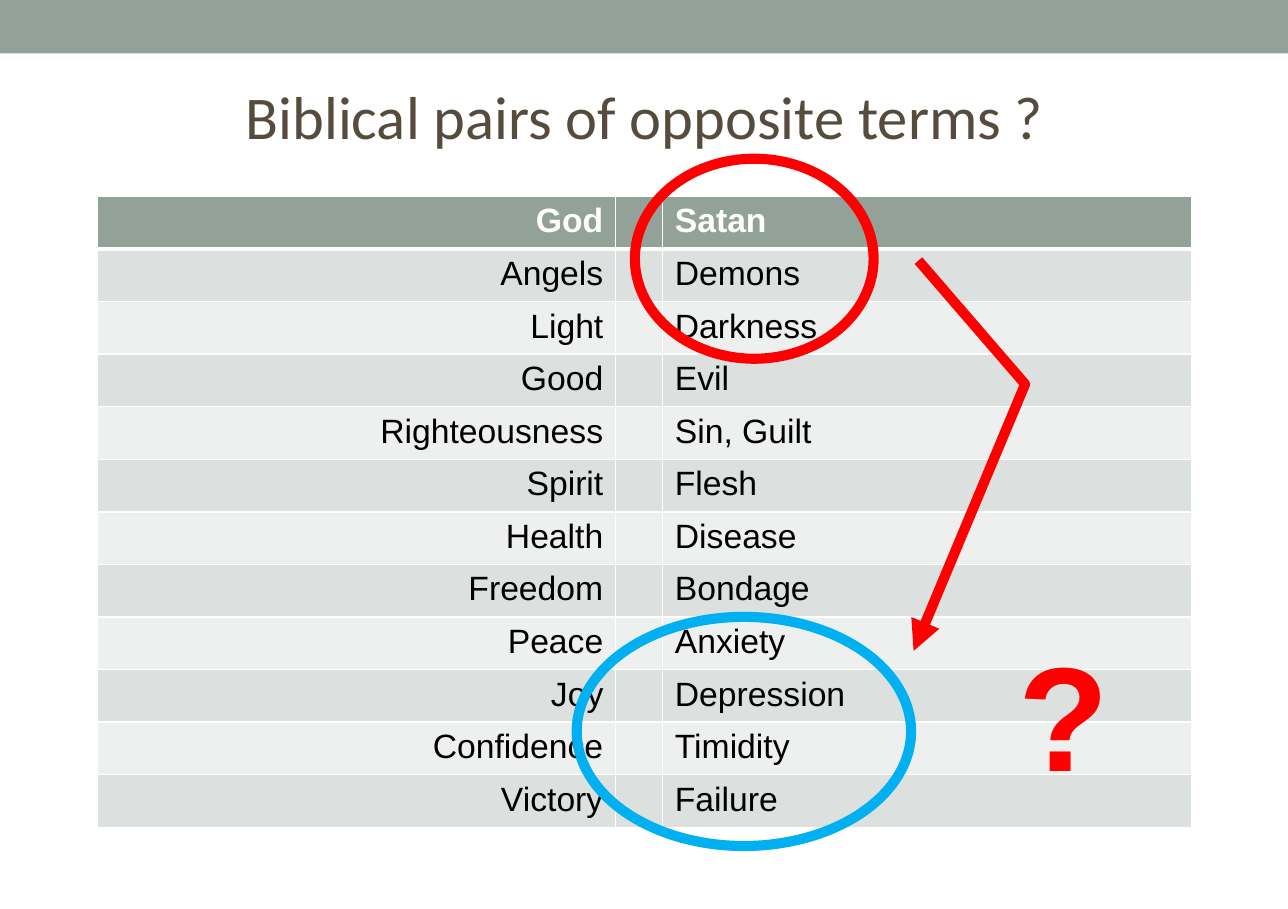
"""Build a slide that pairs opposite biblical terms in a marked-up table."""
from dataclasses import dataclass

from lxml import etree
from pptx import Presentation
from pptx import util as u
from pptx.dml.color import RGBColor
from pptx.enum import shapes, text
from pptx.oxml import ns

SAGE, RED, BLUE, WHITE = "93A299", "FF0000", "00B0F0", "FFFFFF"
BANDS = ("EEF0EF", "DCE0DE")
COLUMN_WIDTHS = (4.28, 0.39, 4.37)
TABLE_HEIGHT = 5.2
PAIRS = (
    ("God", "Satan"), ("Angels", "Demons"), ("Light", "Darkness"),
    ("Good", "Evil"), ("Righteousness", "Sin, Guilt"), ("Spirit", "Flesh"),
    ("Health", "Disease"), ("Freedom", "Bondage"), ("Peace", "Anxiety"),
    ("Joy", "Depression"), ("Confidence", "Timidity"), ("Victory", "Failure"),
)


@dataclass(frozen=True)
class Area:
    left: float
    top: float
    width: float
    height: float

    def lengths(self) -> tuple:
        return tuple(u.Inches(v) for v in (self.left, self.top, self.width, self.height))


@dataclass(frozen=True)
class Style:
    size: int
    color: str
    font: str = "Arial"
    bold: bool = False
    align: text.PP_ALIGN = text.PP_ALIGN.LEFT


@dataclass(frozen=True)
class Label:
    words: str
    area: Area
    style: Style
    anchor: text.MSO_ANCHOR = text.MSO_ANCHOR.TOP


@dataclass(frozen=True)
class Ring:
    area: Area
    color: str


TITLE = Label("Biblical pairs of opposite terms ?", Area(0.8, 0.44, 9.04, 1.02),
              Style(36, "564B3C", "Calibri", align=text.PP_ALIGN.CENTER),
              text.MSO_ANCHOR.MIDDLE)
QUESTION = Label("?", Area(8.31, 5.09, 1.1, 1.58), Style(88, RED, bold=True))
SATAN_RING = Ring(Area(5.24, 1.31, 1.97, 1.65), RED)
FAILURE_RING = Ring(Area(4.76, 5.09, 2.76, 1.89), BLUE)
ARROW_POINTS = ((7.58, 2.15), (8.46, 3.17), (7.54, 5.37))


def rgb(value: str) -> RGBColor:
    return RGBColor.from_string(value)


def paint(target, color: str) -> None:
    target.fill.solid()
    target.fill.fore_color.rgb = rgb(color)


def write(frame, words: str, style: Style) -> None:
    para = frame.paragraphs[0]
    para.alignment = style.align
    span = para.add_run()
    span.text = words
    span.font.name = style.font
    span.font.size = u.Pt(style.size)
    span.font.bold = style.bold
    span.font.color.rgb = rgb(style.color)


def add_label(page, label: Label) -> None:
    frame = page.shapes.add_textbox(*label.area.lengths()).text_frame
    frame.word_wrap = True
    frame.vertical_anchor = label.anchor
    write(frame, label.words, label.style)


def outline(shape, color: str) -> None:
    shape.shadow.inherit = False
    shape.fill.background()
    shape.line.color.rgb = rgb(color)
    shape.line.width = u.Pt(6)


def add_bar(page) -> None:
    bar = page.shapes.add_shape(shapes.MSO_SHAPE.RECTANGLE,
                                *Area(-0.21, -0.11, 11.3, 0.55).lengths())
    bar.shadow.inherit = False
    paint(bar, SAGE)
    bar.line.fill.background()


def add_ring(page, ring: Ring) -> None:
    outline(page.shapes.add_shape(shapes.MSO_SHAPE.OVAL, *ring.area.lengths()), ring.color)


def add_arrow(page) -> None:
    start, *rest = [(u.Inches(x), u.Inches(y)) for x, y in ARROW_POINTS]
    builder = page.shapes.build_freeform(*start)
    builder.add_line_segments(rest, close=False)
    arrow = builder.convert_to_shape()
    outline(arrow, RED)
    line = arrow.line._get_or_add_ln()
    etree.SubElement(line, ns.qn("a:round"))
    etree.SubElement(line, ns.qn("a:tailEnd"), type="triangle")


def set_borders(cell, widths: dict[str, int]) -> None:
    properties = cell._tc.get_or_add_tcPr()
    for index, (side, width) in enumerate(widths.items()):
        line = etree.Element(ns.qn(f"a:ln{side}"), w=str(u.Pt(width)))
        fill = etree.SubElement(line, ns.qn("a:solidFill"))
        etree.SubElement(fill, ns.qn("a:srgbClr"), val=WHITE)
        properties.insert(index, line)


def add_pairs(page) -> None:
    area = Area(0.8, 1.62, sum(COLUMN_WIDTHS), TABLE_HEIGHT)
    table = page.shapes.add_table(len(PAIRS), len(COLUMN_WIDTHS), *area.lengths()).table
    table.horz_banding = False
    for column, width in zip(table.columns, COLUMN_WIDTHS):
        column.width = u.Inches(width)
    for index, (god, satan) in enumerate(PAIRS):
        header = index == 0
        table.rows[index].height = u.Inches(TABLE_HEIGHT / len(PAIRS))
        borders = {"L": 1, "R": 1, "T": 3 if index == 1 else 1, "B": 3 if header else 1}
        for position, words in enumerate((god, "", satan)):
            cell = table.cell(index, position)
            paint(cell, SAGE if header else BANDS[index % 2])
            set_borders(cell, borders)
            if words:
                align = text.PP_ALIGN.LEFT if position else text.PP_ALIGN.RIGHT
                color = WHITE if header else "000000"
                write(cell.text_frame, words, Style(20, color, bold=header, align=align))


def main() -> None:
    deck = Presentation()
    deck.slide_width, deck.slide_height = u.Inches(10.63), u.Inches(7.5)
    page = deck.slides.add_slide(deck.slide_layouts[6])
    add_bar(page)
    add_label(page, TITLE)
    add_pairs(page)
    add_ring(page, SATAN_RING)
    add_arrow(page)
    add_label(page, QUESTION)
    add_ring(page, FAILURE_RING)
    deck.save("out.pptx")


if __name__ == "__main__":
    main()
